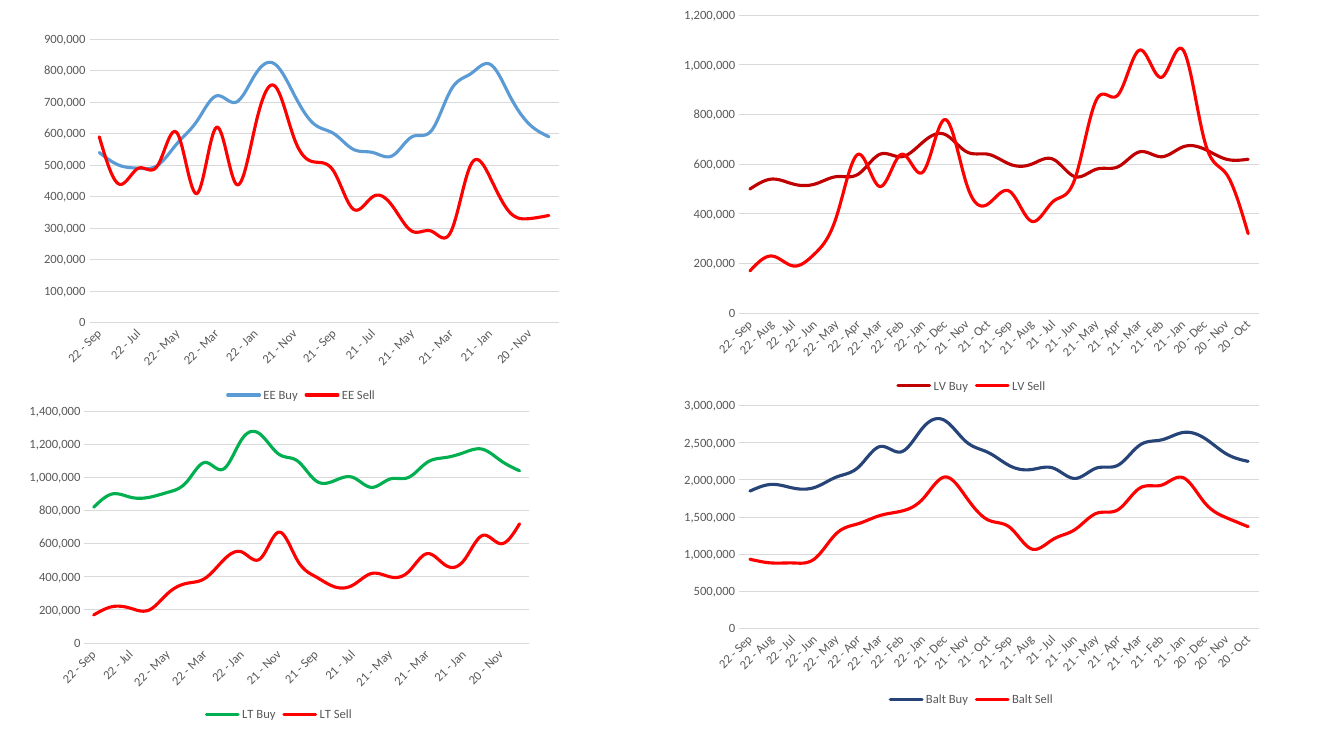
from dataclasses import dataclass

from pptx import Presentation
from pptx.chart.axis import CategoryAxis, ValueAxis
from pptx.chart.data import CategoryChartData
from pptx.chart.series import LineSeries
from pptx.dml.color import RGBColor
from pptx.enum.chart import XL_CHART_TYPE, XL_LEGEND_POSITION, XL_MARKER_STYLE, XL_TICK_MARK
from pptx.slide import Slide
from pptx.text.text import Font
from pptx.util import Cm, Pt

LINE_CHART = XL_CHART_TYPE.LINE
LEGEND_BOTTOM = XL_LEGEND_POSITION.BOTTOM
NO_MARKER = XL_MARKER_STYLE.NONE
NO_TICK = XL_TICK_MARK.NONE

FONT_NAME = "Calibri"
NUMBER_FORMAT = "#,##0"
LABEL_ANGLE = -45
COLORS = {
    "black": "000000",
    "label": "595959",
    "grid": "D9D9D9",
    "sell": "FF0000",
    "EE": "5B9BD5",
    "LV": "C00000",
    "LT": "00B050",
    "Balt": "264478",
}

# 24 months, running back from September 2022 to October 2020
MONTHS = ["Jan", "Feb", "Mar", "Apr", "May", "Jun",
          "Jul", "Aug", "Sep", "Oct", "Nov", "Dec"]
LAST_MONTH = 22 * 12 + MONTHS.index("Sep")
PERIODS = [f"{month // 12} - {MONTHS[month % 12]}"
           for month in range(LAST_MONTH, LAST_MONTH - 24, -1)]


@dataclass
class Market:
    """One chart: frame in centimetres, axis and values in thousands."""
    name: str
    left: float
    top: float
    width: float
    height: float
    axis_top: int
    axis_step: int
    buy: list[int]
    sell: list[int]


MARKETS = [
    Market("EE", 0.84, 0.61, 13.51, 9.63, 900, 100,
           [540, 500, 490, 500, 570, 640, 720, 700, 790, 820, 720, 630,
            600, 550, 540, 530, 590, 610, 740, 790, 820, 720, 630, 590],
           [590, 440, 490, 500, 600, 410, 620, 440, 630, 750, 580, 510,
            480, 360, 400, 370, 290, 290, 290, 500, 460, 350, 330, 340]),
    Market("LV", 16.94, 0, 15.09, 10.01, 1200, 200,
           [500, 540, 520, 520, 550, 560, 640, 630, 690, 720, 650, 640,
            600, 600, 620, 550, 580, 590, 650, 630, 670, 660, 620, 620],
           [170, 230, 190, 240, 390, 640, 510, 640, 570, 780, 520, 440,
            490, 370, 450, 540, 860, 880, 1060, 950, 1060, 690, 560, 320]),
    Market("LT", 0.48, 10.01, 13.11, 8.28, 1400, 200,
           [820, 900, 880, 880, 910, 970, 1090, 1050, 1230, 1260, 1140, 1100,
            980, 980, 1000, 940, 990, 1000, 1090, 1120, 1150, 1170, 1100, 1040],
           [170, 220, 210, 200, 300, 360, 390, 500, 550, 510, 670, 500,
            400, 340, 350, 420, 400, 430, 540, 470, 500, 650, 600, 720]),
    Market("Balt", 16.94, 9.88, 15.09, 8.03, 3000, 500,
           [1850, 1940, 1890, 1900, 2040, 2170, 2450, 2380, 2710, 2800, 2510, 2370,
            2190, 2140, 2160, 2020, 2160, 2200, 2470, 2540, 2640, 2560, 2350, 2250],
           [930, 880, 880, 940, 1280, 1410, 1520, 1580, 1750, 2040, 1760, 1460,
            1360, 1070, 1200, 1330, 1550, 1600, 1890, 1930, 2030, 1690, 1490, 1370]),
]


def color(name: str) -> RGBColor:
    return RGBColor.from_string(COLORS[name])


def format_font(font: Font, *, size: float = 9, color_name: str = "label") -> None:
    font.name = FONT_NAME
    font.size = Pt(size)
    font.color.rgb = color(color_name)


def format_period_axis(axis: CategoryAxis) -> None:
    axis.major_tick_mark = axis.minor_tick_mark = NO_TICK
    axis.format.line.color.rgb = color("grid")
    axis.format.line.width = Pt(0.75)
    format_font(axis.tick_labels.font)
    for body in axis._element.xpath("c:txPr/a:bodyPr"):
        body.set("rot", str(LABEL_ANGLE * 60000))


def format_amount_axis(axis: ValueAxis, market: Market) -> None:
    axis.major_tick_mark = axis.minor_tick_mark = NO_TICK
    axis.minimum_scale = 0
    axis.maximum_scale = market.axis_top * 1000
    axis.major_unit = market.axis_step * 1000
    axis.format.line.fill.background()
    grid_line = axis.major_gridlines.format.line
    grid_line.color.rgb = color("grid")
    grid_line.width = Pt(0.75)
    axis.tick_labels.number_format = NUMBER_FORMAT
    axis.tick_labels.number_format_is_linked = False
    format_font(axis.tick_labels.font)


def format_series(series: LineSeries, color_name: str) -> None:
    series.smooth = True
    series.marker.style = NO_MARKER
    series.format.line.color.rgb = color(color_name)
    series.format.line.width = Pt(2.25)
    for line in series._element.xpath("c:spPr/a:ln"):
        line.set("cap", "rnd")


def add_market_chart(page: Slide, market: Market) -> None:
    data = CategoryChartData(number_format=NUMBER_FORMAT)
    data.categories = PERIODS
    for side, thousands in (("Buy", market.buy), ("Sell", market.sell)):
        data.add_series(f"{market.name} {side}", [value * 1000 for value in thousands])

    frame = page.shapes.add_chart(
        LINE_CHART, Cm(market.left), Cm(market.top),
        Cm(market.width), Cm(market.height), data)
    chart = frame.chart
    chart.has_title = False
    format_font(chart.font, size=10, color_name="black")

    # Axes
    format_period_axis(chart.category_axis)
    format_amount_axis(chart.value_axis, market)

    # Lines
    chart.plots[0].vary_by_categories = False
    for series, color_name in zip(chart.plots[0].series, (market.name, "sell")):
        format_series(series, color_name)

    # Legend
    chart.has_legend = True
    chart.legend.position = LEGEND_BOTTOM
    chart.legend.include_in_layout = False
    format_font(chart.legend.font)


def main() -> None:
    deck = Presentation()
    deck.slide_width = Cm(33.87)
    deck.slide_height = Cm(19.05)
    page = deck.slides.add_slide(deck.slide_layouts[6])
    for market in MARKETS:
        add_market_chart(page, market)
    deck.save("out.pptx")


if __name__ == "__main__":
    main()
